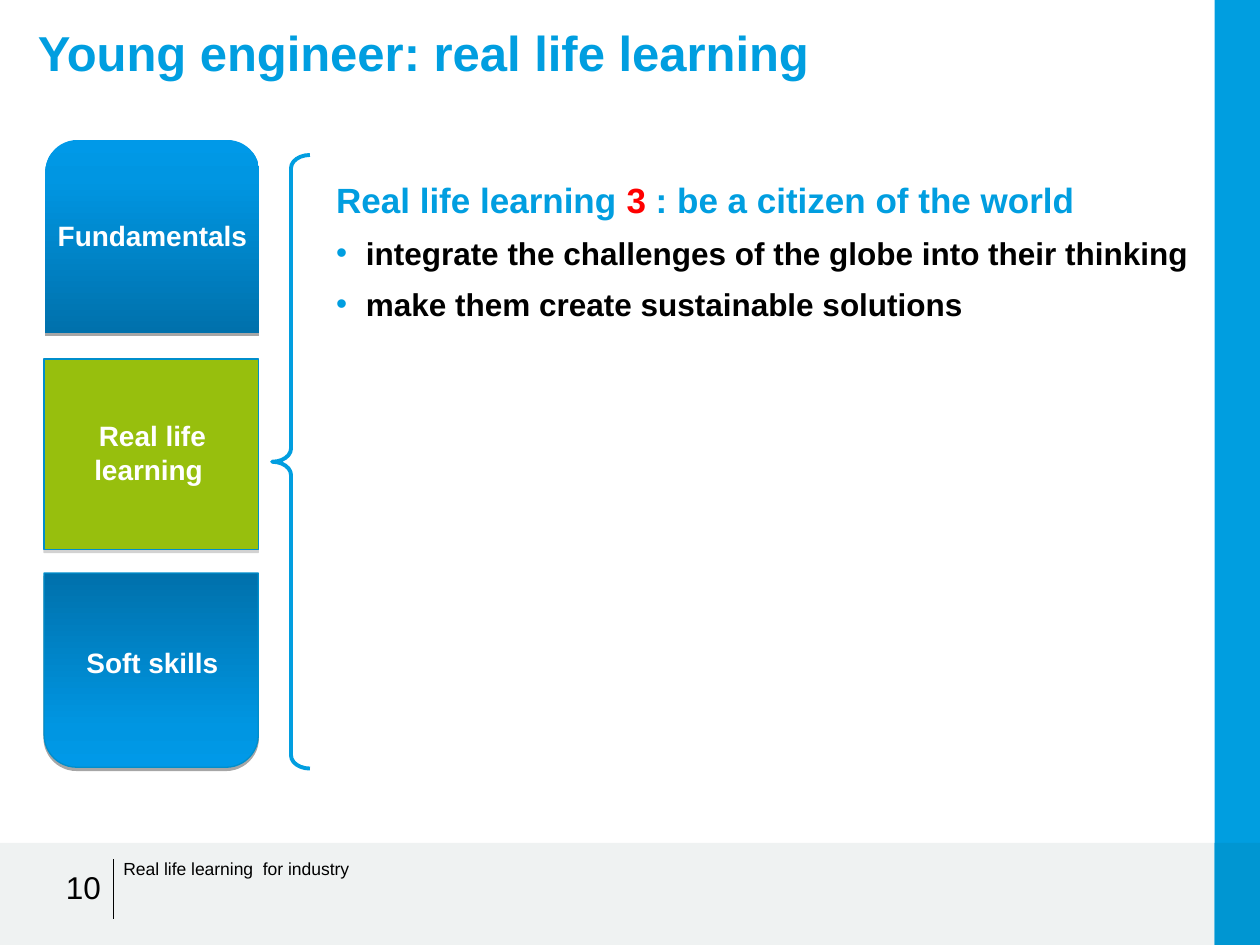
from lxml import etree
from pptx import Presentation
from pptx.dml.color import RGBColor
from pptx.enum import shapes, text
from pptx.oxml import ns
from pptx.util import Pt

COLORS = {
    "blue": "009EE0", "brace": "019EE0", "corner": "0096D2", "edge": "008ECB",
    "green": "97BF0D", "band": "BDC7C8", "red": "FF0000", "gray": "808080",
    "black": "000000", "white": "FFFFFF",
}
TILE_GRADIENT = [(0, "0099E8"), (20, "0096E2"), (100, "0071AC")]
SHAPE = shapes.MSO_SHAPE
ALIGN = text.PP_ALIGN
ANCHOR = text.MSO_ANCHOR


def rgb(name):
    return RGBColor.from_string(COLORS[name])


def sub(parent, tag, **attrs):
    return etree.SubElement(parent, ns.qn(tag), {k: str(v) for k, v in attrs.items()})


def points(box):
    return [Pt(v) for v in box]


def add_shape(slide, kind, box, fill=None, line=None, width=0.75):
    s = slide.shapes.add_shape(kind, *points(box))
    s.shadow.inherit = False
    if fill:
        s.fill.solid()
        s.fill.fore_color.rgb = rgb(fill)
    else:
        s.fill.background()
    if line:
        s.line.color.rgb = rgb(line)
        s.line.width = Pt(width)
    else:
        s.line.fill.background()
    return s


def add_gradient(s, stops):
    s.fill.gradient()
    s.fill.gradient_angle = 270
    stop_list = s._element.spPr.find(ns.qn("a:gradFill")).find(ns.qn("a:gsLst"))
    for stop in list(stop_list):
        stop_list.remove(stop)
    for pos, color in stops:
        sub(sub(stop_list, "a:gs", pos=pos * 1000), "a:srgbClr", val=color)


def add_shadow(s, color):
    effects = s._element.spPr.find(ns.qn("a:effectLst"))
    shadow = sub(effects, "a:outerShdw", blurRad=0, dist=Pt(1.8), dir=5400000,
                 rotWithShape=0)
    sub(sub(shadow, "a:srgbClr", val=COLORS[color]), "a:alpha", val=35000)


def add_run(p, words, size, color, bold=False):
    r = p.add_run()
    r.text = words
    r.font.name = "Arial"
    r.font.size = Pt(size)
    r.font.bold = bold
    r.font.color.rgb = rgb(color)


def set_frame(tf, anchor, insets):
    tf.word_wrap = True
    tf.auto_size = text.MSO_AUTO_SIZE.NONE
    tf.vertical_anchor = anchor
    tf.margin_left, tf.margin_top, tf.margin_right, tf.margin_bottom = points(insets)


def add_text(slide, box, words, size, color, align=ALIGN.LEFT, bold=False,
             insets=(7.2, 3.6, 7.2, 3.6)):
    tf = slide.shapes.add_textbox(*points(box)).text_frame
    set_frame(tf, ANCHOR.MIDDLE, insets)
    p = tf.paragraphs[0]
    p.alignment = align
    add_run(p, words, size, color, bold)


def add_frame(slide, width, height):
    """Footer band, right strip, page number and footer text."""
    top, strip = 481.7, 26
    band = add_shape(slide, SHAPE.RECTANGLE, (0, top, width, height - top), "band")
    fill = band._element.spPr.find(ns.qn("a:solidFill"))
    sub(fill[0], "a:alpha", val=23000)
    add_shape(slide, SHAPE.RECTANGLE, (width - strip, 0, strip, height), "blue")
    add_shape(slide, SHAPE.RECTANGLE, (width - strip, top, strip, height - top), "corner")

    divider = slide.shapes.add_connector(
        shapes.MSO_CONNECTOR.STRAIGHT, *points((65, top + 9.3, 65, top + 43.2)))
    divider.line.color.rgb = rgb("black")
    divider.line.width = Pt(0.75)
    sub(divider._element.spPr, "a:effectLst")

    add_text(slide, (63.4, top + 5, 228.2, 19.4), "Real life learning  for industry",
             10, "black")
    add_text(slide, (18, top + 7.2, 46.8, 35.3), "10", 18, "black", ALIGN.RIGHT)


def add_title(slide, box, words):
    title = slide.shapes.title
    title.left, title.top, title.width, title.height = points(box)
    set_frame(title.text_frame, ANCHOR.TOP, (7.2, 3.6, 7.2, 3.6))
    p = title.text_frame.paragraphs[0]
    p.alignment = ALIGN.LEFT
    p.line_spacing = 0.95
    add_run(p, words, 28, "blue", True)


def add_tile(slide, box, words, label_top, label_height, kind, rotation=0,
             fill=None, line=None, shadow="black"):
    s = add_shape(slide, kind, box, fill, line)
    s.rotation = rotation
    if not fill:
        add_gradient(s, TILE_GRADIENT)
    add_shadow(s, shadow)
    add_text(slide, (32.4, label_top, 109.4, label_height), words, 16, "white",
             ALIGN.CENTER, True, (0, 0, 0, 0))


def add_tiles(slide, left, width):
    """Column of three topics, with the current one in green."""
    add_tile(slide, (left + 0.7, 80, width, 110.2), "Fundamentals", 124.6, 19.4,
             SHAPE.ROUND_2_SAME_RECTANGLE)
    add_tile(slide, (left, 205.2, width, 108.7), "Real life learning ", 239, 38.9,
             SHAPE.RECTANGLE, fill="green", line="edge", shadow="gray")
    add_tile(slide, (left, 327.4, width, 111), "Soft skills", 368.6, 19.4,
             SHAPE.ROUND_2_SAME_RECTANGLE, rotation=180, line="edge")


def add_brace(slide, box):
    s = add_shape(slide, SHAPE.LEFT_BRACE, box, line="brace", width=2.25)
    s.adjustments[0] = 0.35
    s.adjustments[1] = 0.5


def add_bullet(p, indent):
    pPr = p._p.get_or_add_pPr()
    pPr.set("marL", str(Pt(indent)))
    pPr.set("indent", str(-Pt(indent)))
    sub(sub(pPr, "a:buClr"), "a:srgbClr", val=COLORS["blue"])
    sub(pPr, "a:buFont", typeface="Arial")
    sub(pPr, "a:buChar", char="•")


def add_body(slide, box, heading, bullets):
    tf = slide.shapes.add_textbox(*points(box)).text_frame
    set_frame(tf, ANCHOR.TOP, (7.2, 5.8, 7.2, 3.6))
    p = tf.paragraphs[0]
    p.line_spacing = 0.8
    for words, color in heading:
        add_run(p, words, 20, color, True)
    for words in bullets:
        p = tf.add_paragraph()
        add_bullet(p, 17)
        p.line_spacing = 0.8
        p.space_before = Pt(12)
        add_run(p, words, 18, "black", True)


def main():
    prs = Presentation()
    prs.slide_width, prs.slide_height = Pt(720), Pt(540)
    slide = prs.slides.add_slide(prs.slide_layouts[5])

    add_frame(slide, 720, 540)
    add_title(slide, (14.4, 11.5, 648, 46), "Young engineer: real life learning")
    add_tiles(slide, 25.2, 122.4)
    add_brace(slide, (155.5, 88.6, 21.6, 350.6))
    add_body(
        slide, (185, 100.8, 510.5, 341.3),
        [("Real life learning ", "brace"), ("3", "red"),
         (" : be a citizen of the world", "brace")],
        ["integrate the challenges of the globe into their thinking",
         "make them create sustainable solutions"])
    prs.save("out.pptx")


if __name__ == "__main__":
    main()
